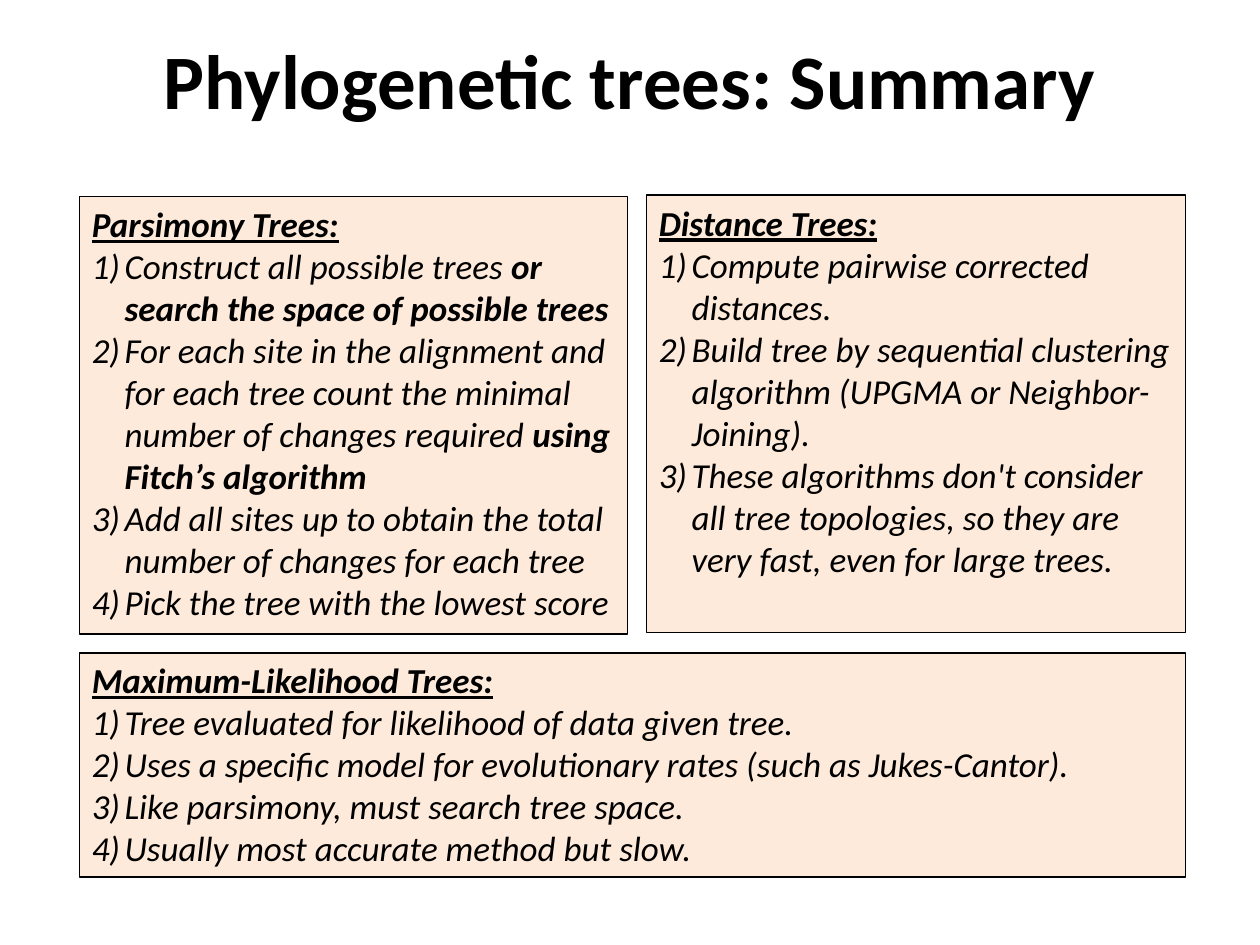
from pptx import Presentation
from pptx.dml.color import RGBColor
from pptx.enum.shapes import MSO_SHAPE
from pptx.enum.text import MSO_ANCHOR, PP_ALIGN
from pptx.oxml.xmlchemy import OxmlElement
from pptx.util import Inches, Pt

RECTANGLE = MSO_SHAPE.RECTANGLE
TOP, MIDDLE = MSO_ANCHOR.TOP, MSO_ANCHOR.MIDDLE
LEFT, CENTER = PP_ALIGN.LEFT, PP_ALIGN.CENTER

WIDTH, HEIGHT = 10, 7.5
COLORS = {"text": "000000", "panel": "FDEADA", "border": "000000"}
TITLE = {"size": Pt(44), "bold": True}
HEADING = {"size": Pt(20), "bold": True, "italic": True, "underline": True}
STEP = {"size": Pt(20), "bold": False, "italic": True}
STRONG_STEP = {**STEP, "bold": True}
HANG = Inches(0.26)

MARGIN, RIGHT_EDGE = 0.63, 9.41
GAP = 0.15
LEFT_WIDTH = 4.35
UPPER_TOP, UPPER_HEIGHT = 1.56, 3.47
LOWER_TOP, LOWER_HEIGHT = UPPER_TOP + UPPER_HEIGHT + GAP, 1.78
RIGHT_START = MARGIN + LEFT_WIDTH + GAP

METHODS = [
    ("Parsimony Trees:", (MARGIN, UPPER_TOP, LEFT_WIDTH, UPPER_HEIGHT), [
        ("Construct all possible trees ", "or search the space of possible trees"),
        ("For each site in the alignment and for each tree count the minimal "
         "number of changes required ", "using Fitch’s algorithm"),
        ("Add all sites up to obtain the total number of changes for each tree",),
        ("Pick the tree with the lowest score",),
    ]),
    ("Distance Trees:",
     (RIGHT_START, UPPER_TOP - 0.01, RIGHT_EDGE - RIGHT_START, UPPER_HEIGHT), [
         ("Compute pairwise corrected distances.",),
         ("Build tree by sequential clustering algorithm (UPGMA or Neighbor-Joining).",),
         ("These algorithms don't consider all tree topologies, so they are very fast, "
          "even for large trees.",),
     ]),
    ("Maximum-Likelihood Trees:",
     (MARGIN, LOWER_TOP, RIGHT_EDGE - MARGIN, LOWER_HEIGHT), [
         ("Tree evaluated for likelihood of data given tree.",),
         ("Uses a specific model for evolutionary rates (such as Jukes-Cantor).",),
         ("Like parsimony, must search tree space.",),
         ("Usually most accurate method but slow.",),
     ]),
]


def color(name):
    return RGBColor.from_string(COLORS[name])


def add_run(paragraph, text, formats):
    run = paragraph.add_run()
    run.text = text
    run.font.name = "Calibri"
    run.font.color.rgb = color("text")
    for attribute, value in formats.items():
        setattr(run.font, attribute, value)


def number_step(paragraph):
    properties = paragraph._p.get_or_add_pPr()
    properties.set("marL", str(HANG))
    properties.set("indent", str(-HANG))
    font = OxmlElement("a:buFont")
    font.set("typeface", "+mj-lt")
    numbering = OxmlElement("a:buAutoNum")
    numbering.set("type", "arabicParenR")
    properties.extend([font, numbering])


def add_title(slide, text, box):
    frame = slide.shapes.add_textbox(*map(Inches, box)).text_frame
    frame.word_wrap = True
    frame.vertical_anchor = MIDDLE
    paragraph = frame.paragraphs[0]
    paragraph.alignment = CENTER
    add_run(paragraph, text, TITLE)


def add_method(slide, heading, box, steps):
    panel = slide.shapes.add_shape(RECTANGLE, *map(Inches, box))
    panel.shadow.inherit = False
    panel.fill.solid()
    panel.fill.fore_color.rgb = color("panel")
    panel.line.color.rgb = color("border")
    panel.line.width = Pt(1)

    frame = panel.text_frame
    frame.word_wrap = True
    frame.vertical_anchor = TOP
    title_line = frame.paragraphs[0]
    title_line.alignment = LEFT
    add_run(title_line, heading, HEADING)
    for step in steps:
        paragraph = frame.add_paragraph()
        paragraph.alignment = LEFT
        number_step(paragraph)
        for text, formats in zip(step, (STEP, STRONG_STEP)):
            add_run(paragraph, text, formats)


def main():
    presentation = Presentation()
    presentation.slide_width = Inches(WIDTH)
    presentation.slide_height = Inches(HEIGHT)
    slide = presentation.slides.add_slide(presentation.slide_layouts[6])
    add_title(slide, "Phylogenetic trees: Summary", (0, 0, WIDTH, HEIGHT / 6))
    for heading, box, steps in METHODS:
        add_method(slide, heading, box, steps)
    presentation.save("out.pptx")


if __name__ == "__main__":
    main()
